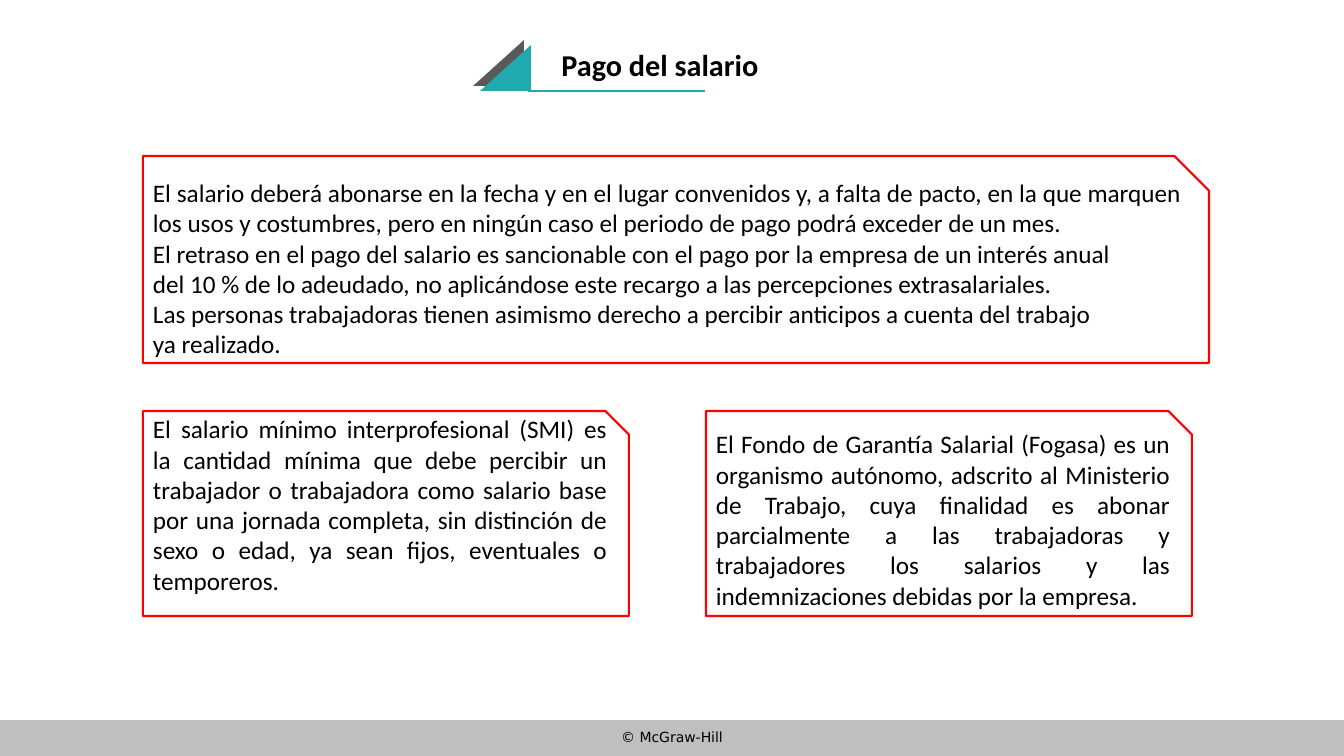
from lxml import etree
from pptx import Presentation
from pptx.dml.color import RGBColor
from pptx.enum.shapes import MSO_CONNECTOR, MSO_SHAPE
from pptx.enum.text import MSO_ANCHOR, MSO_AUTO_SIZE, PP_ALIGN
from pptx.oxml.ns import qn
from pptx.util import Pt

# Content
TITLE = "Pago del salario"
FOOTER = "© McGraw-Hill"
PAYMENT_RULES = [
    "El salario deberá abonarse en la fecha y en el lugar convenidos y, a falta de pacto, en la que marquen "
    "los usos y costumbres, pero en ningún caso el periodo de pago podrá exceder de un mes.",
    "El retraso en el pago del salario es sancionable con el pago por la empresa de un interés anual",
    "del 10 % de lo adeudado, no aplicándose este recargo a las percepciones extrasalariales.",
    "Las personas trabajadoras tienen asimismo derecho a percibir anticipos a cuenta del trabajo",
    "ya realizado.",
]
MINIMUM_WAGE = [
    "El salario mínimo interprofesional (SMI) es la cantidad mínima que debe percibir un trabajador o "
    "trabajadora como salario base por una jornada completa, sin distinción de sexo o edad, ya sean fijos, "
    "eventuales o temporeros.",
]
GUARANTEE_FUND = [
    "El Fondo de Garantía Salarial (Fogasa) es un organismo autónomo, adscrito al Ministerio de Trabajo, "
    "cuya finalidad es abonar parcialmente a las trabajadoras y trabajadores los salarios y las "
    "indemnizaciones debidas por la empresa.",
]

# Boxes in px: left, top, width, height, corner cut, bottom inset, paragraphs
CARDS = [
    (143, 156, 1066, 207, 0.167, 5, PAYMENT_RULES),
    (143, 411, 486, 205, 0.115, 35, MINIMUM_WAGE),
    (706, 411, 486, 205, 0.115, 5, GUARANTEE_FUND),
]
TRIANGLES = [(473, 40, "595959"), (480, 45, "20AAAF")]
WIDTH, HEIGHT = 1344, 756
RED, TEAL, GREY, BLACK = "FF0000", "20AAAF", "BFBFBF", "000000"


def px(*lengths):
    return [round(length * 914400 / 100.8) for length in lengths]


def color(value):
    return RGBColor.from_string(value)


def write(shape, lines, size, font="Calibri", bold=False, align=PP_ALIGN.CENTER,
          anchor=MSO_ANCHOR.TOP, spacing=1.0, bottom=5):
    frame = shape.text_frame
    frame.word_wrap = True
    frame.auto_size = MSO_AUTO_SIZE.NONE
    frame.vertical_anchor = anchor
    frame.margin_left, frame.margin_right, frame.margin_top, frame.margin_bottom = px(10, 10, 5, bottom)
    for index, line in enumerate(lines):
        para = frame.paragraphs[0] if index == 0 else frame.add_paragraph()
        para.alignment = align
        para.line_spacing = spacing
        para.space_before = Pt(0)
        span = para.add_run()
        span.text = line
        span.font.name, span.font.size, span.font.bold = font, Pt(size), bold
        span.font.color.rgb = color(BLACK)


def draw(shapes, kind, area, fill=None, line=None, cut=None):
    shape = shapes.add_shape(kind, *px(*area))
    shape.shadow.inherit = False
    if fill:
        shape.fill.solid()
        shape.fill.fore_color.rgb = color(fill)
    else:
        shape.fill.background()
    if line:
        shape.line.color.rgb = color(line)
        shape.line.width = Pt(1.5)
    else:
        shape.line.fill.background()
    if cut is not None:
        shape.adjustments[0] = cut
    return shape


deck = Presentation()
deck.slide_width, deck.slide_height = px(WIDTH, HEIGHT)
page = deck.slides.add_slide(deck.slide_layouts[5])

# Footer band
draw(page.shapes, MSO_SHAPE.RECTANGLE, (0, 720, WIDTH, 36), fill=GREY)
credit = page.shapes.add_textbox(*px(0, 724, WIDTH, 32))
write(credit, [FOOTER], 10, font="DejaVu Sans")

# Title with its triangles and underline
emblem = page.shapes.add_group_shape()
for left, top, fill in TRIANGLES:
    draw(emblem.shapes, MSO_SHAPE.ISOSCELES_TRIANGLE, (left, top, 51, 46), fill=fill, cut=1)
underline = emblem.shapes.add_connector(MSO_CONNECTOR.STRAIGHT, *px(528, 91, 705, 91))
underline.line.color.rgb = color(TEAL)
underline.line.width = Pt(1)
etree.SubElement(underline._element.spPr, qn("a:effectLst"))
title = page.shapes.title
title.left, title.top, title.width, title.height = px(196, 45, 928, 81)
write(title, [TITLE], 21.6, bold=True, spacing=0.9)

# Text cards
for left, top, width, height, cut, bottom, lines in CARDS:
    card = draw(page.shapes, MSO_SHAPE.SNIP_1_RECTANGLE, (left, top, width, height), line=RED, cut=cut)
    write(card, lines, 18, align=PP_ALIGN.JUSTIFY, anchor=MSO_ANCHOR.MIDDLE, bottom=bottom)

deck.save("out.pptx")
